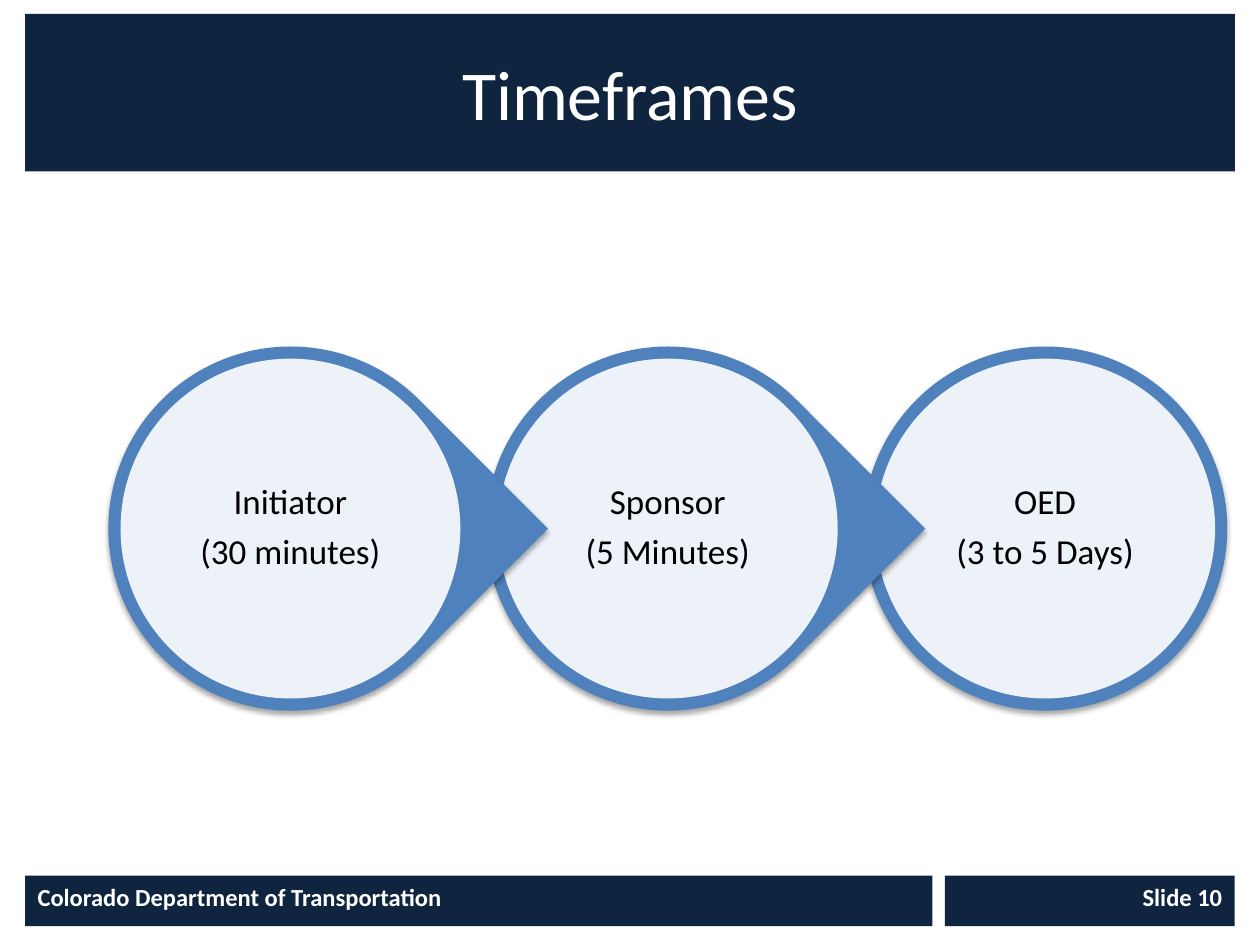
from lxml.etree import SubElement as Sub
from pptx import Presentation
from pptx.dml.color import RGBColor as Rgb
from pptx.enum.shapes import MSO_SHAPE as Kind
from pptx.enum.text import MSO_ANCHOR as Anchor, PP_ALIGN as Align
from pptx.oxml.ns import qn
from pptx.util import Inches, Pt

HUE = {"navy": "0F243E", "blue": "4F81BD", "white": "FFFFFF", "black": "000000"}
STEPS = [
    ("Initiator", "(30 minutes)"),
    ("Sponsor", "(5 Minutes)"),
    ("OED", "(3 to 5 Days)"),
]
WIDE, HIGH = 10, 7.5
EDGE = 0.02 * WIDE
FULL = WIDE - 2 * EDGE


def tint(hue):
    return Rgb.from_string(HUE[hue])


def inset(box, gap):
    x, y, w, h = box
    return x + gap, y + gap, w - 2 * gap, h - 2 * gap


def paint(shape, hue):
    shape.fill.solid()
    shape.fill.fore_color.rgb = tint(hue)


def add_form(slide, kind, box, hue):
    shape = slide.shapes.add_shape(kind, *map(Inches, box))
    paint(shape, hue)
    shape.line.fill.background()
    shape.shadow.inherit = False
    return shape


def write(frame, lines, size, hue, align, bold=False, **form):
    """Fill a frame with one paragraph a line; form holds paragraph settings."""
    frame.word_wrap = True
    frame.text = "\n".join(lines)
    look = {"name": "Calibri", "size": Pt(size), "bold": bold}
    for para in frame.paragraphs:
        for key, val in {"alignment": align, **form}.items():
            setattr(para, key, val)
        for key, val in look.items():
            setattr(para.font, key, val)
        para.font.color.rgb = tint(hue)


def cast(shape):
    """Give the shape a soft shadow that falls straight down."""
    glow = shape._element.spPr.find(qn("a:effectLst"))
    drop = Sub(glow, qn("a:outerShdw"), blurRad=str(Pt(3.1)), dist=str(Pt(1.8)),
               dir="5400000", rotWithShape="0")
    tone = Sub(drop, qn("a:srgbClr"), val=HUE["black"])
    Sub(tone, qn("a:alpha"), val="35000")


def fade(shape, share):
    tone = shape._element.spPr.find(qn("a:solidFill"))[0]
    Sub(tone, qn("a:alpha"), val=str(round(share * 100000)))


def add_title(slide, box):
    title = slide.shapes.title
    for key, val in zip(("left", "top", "width", "height"), box):
        setattr(title, key, Inches(val))
    paint(title, "navy")
    title.text_frame.vertical_anchor = Anchor.MIDDLE
    write(title.text_frame, ["Timeframes"], 40, "white", Align.CENTER)


def add_step(slide, box, lines, last):
    """Draw a ringed disc, with a point to the right unless it is the last."""
    ring = add_form(slide, Kind.OVAL if last else Kind.TEAR, box, "blue")
    ring.rotation = 0 if last else 45
    cast(ring)
    width = box[2]
    fade(add_form(slide, Kind.OVAL, inset(box, width / 30), "white"), 0.9)
    label = slide.shapes.add_textbox(*map(Inches, inset(box, width / 6)))
    frame = label.text_frame
    frame.vertical_anchor = Anchor.MIDDLE
    for side in ("left", "top", "right", "bottom"):
        setattr(frame, f"margin_{side}", Inches(0.03))
    write(frame, lines, 20, "black", Align.CENTER,
          line_spacing=0.9, space_after=Pt(7))


def add_flow(slide, box):
    """Place the steps from right to left, so each point lies over the next disc."""
    x, y, w, size = box
    pitch = (w - size) / (len(STEPS) - 1)
    final = len(STEPS) - 1
    for i, lines in reversed(list(enumerate(STEPS))):
        add_step(slide, (x + i * pitch, y, size, size), lines, i == final)


def add_foot(slide, box):
    x, y, w, h = box
    gap, main = w / 96, w * 0.75
    parts = [
        (x, main, "Colorado Department of Transportation", Align.LEFT),
        (x + main + gap, w - main - gap, "Slide 10", Align.RIGHT),
    ]
    for left, width, words, align in parts:
        bar = add_form(slide, Kind.RECTANGLE, (left, y, width, h), "navy")
        bar.text_frame.vertical_anchor = Anchor.TOP
        write(bar.text_frame, [words], 14, "white", align, bold=True)


def main():
    deck = Presentation()
    deck.slide_width, deck.slide_height = Inches(WIDE), Inches(HIGH)
    slide = deck.slides.add_slide(deck.slide_layouts[5])
    add_flow(slide, (0.86, 2.75, 8.88, 2.89))
    add_foot(slide, (EDGE, 6.95, FULL, 0.4))
    add_title(slide, (EDGE, 0.11, FULL, 1.25))
    deck.save("out.pptx")


if __name__ == "__main__":
    main()
